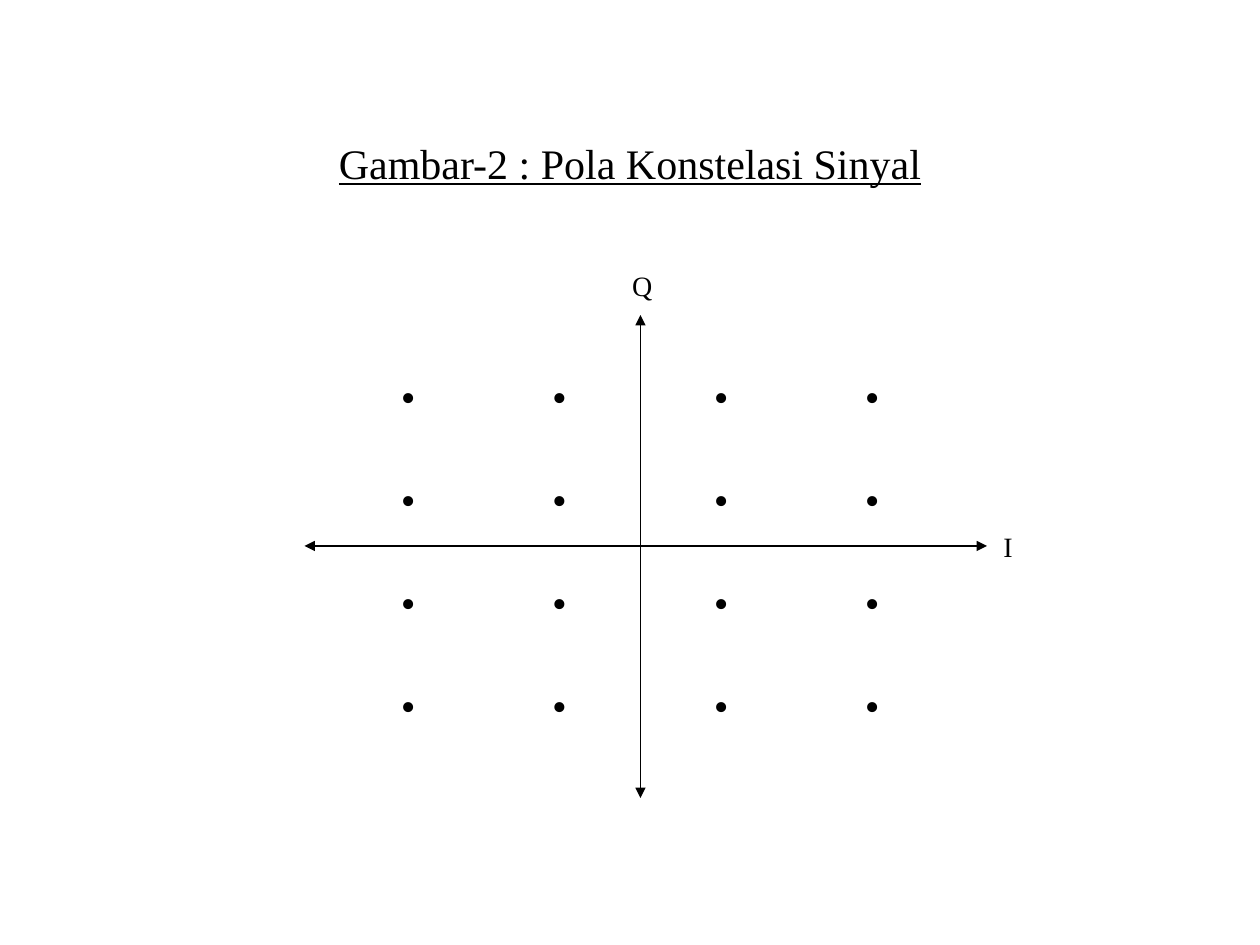
from dataclasses import dataclass

from lxml.etree import SubElement
from pptx import Presentation
from pptx.dml.color import RGBColor
from pptx.enum.shapes import MSO_CONNECTOR
from pptx.enum.text import MSO_ANCHOR as Anchor, PP_ALIGN as Align
from pptx.oxml.ns import qn
from pptx.util import Pt


@dataclass(frozen=True)
class Theme:
    font: str = "Times New Roman"
    ink: RGBColor = RGBColor(0, 0, 0)
    title_size: float = 24
    dot_size: float = 24
    label_size: float = 16
    axis_width: float = 0.75


@dataclass(frozen=True)
class Box:
    left: float
    top: float
    width: float
    height: float

    def lengths(self) -> tuple:
        return Pt(self.left), Pt(self.top), Pt(self.width), Pt(self.height)


@dataclass(frozen=True)
class Axis:
    start: tuple[float, float]
    end: tuple[float, float]
    label: str
    label_box: Box


THEME = Theme()
TITLE_BOX = Box(54, 48, 612, 90)
ORIGIN_X, ORIGIN_Y = 366, 312
AXES = (
    Axis((ORIGIN_X, 180), (ORIGIN_X, 456), "Q", Box(354, 150, 26, 26.5)),
    Axis((174, ORIGIN_Y), (564, ORIGIN_Y), "I", Box(566, 299, 20, 26.5)),
)
DOTS_BOX = Box(222, 210, 288, 208.8)
DOT_ROWS = 4
DOT_TABS = (86.4, 178.8, 265.2)  # columns after the first
DOT_ROW_GAP = 30


def format_text(tf, size: float, align: Align, underline: bool = False) -> None:
    tf.vertical_anchor = Anchor.MIDDLE
    for p in tf.paragraphs:
        p.alignment = align
        for r in p.runs:
            r.font.name = THEME.font
            r.font.size = Pt(size)
            r.font.color.rgb = THEME.ink
            if underline:
                r.font.underline = True


def add_text(slide, box: Box, text: str, size: float, align: Align,
             wrap: bool):
    tf = slide.shapes.add_textbox(*box.lengths()).text_frame
    tf.word_wrap = wrap
    tf.text = text
    format_text(tf, size, align)
    return tf


def add_axis(slide, axis: Axis) -> None:
    points = [Pt(v) for v in (*axis.start, *axis.end)]
    line = slide.shapes.add_connector(MSO_CONNECTOR.STRAIGHT, *points)
    line.line.color.rgb = THEME.ink
    line.line.width = Pt(THEME.axis_width)
    ln = line.line._get_or_add_ln()
    for end in ("a:headEnd", "a:tailEnd"):
        SubElement(ln, qn(end), type="triangle")
    SubElement(line._element.spPr, qn("a:effectLst"))
    add_text(slide, axis.label_box, axis.label, THEME.label_size,
             Align.CENTER, wrap=False)


def add_constellation(slide) -> None:
    row = "\t".join("•" * (len(DOT_TABS) + 1))
    tf = add_text(slide, DOTS_BOX, "\n".join([row] * DOT_ROWS),
                  THEME.dot_size, Align.LEFT, wrap=True)
    for i, p in enumerate(tf.paragraphs):
        p.space_before = Pt(DOT_ROW_GAP if i else 0)
        tabs = SubElement(p._p.get_or_add_pPr(), qn("a:tabLst"))
        for pos in DOT_TABS:
            SubElement(tabs, qn("a:tab"), pos=str(Pt(pos)), algn="l")


def main() -> None:
    prs = Presentation()
    prs.slide_width, prs.slide_height = Pt(720), Pt(540)
    slide = prs.slides.add_slide(prs.slide_layouts[5])

    # Title
    title = slide.shapes.title
    title.left, title.top, title.width, title.height = TITLE_BOX.lengths()
    title.text_frame.text = "Gambar-2 : Pola Konstelasi Sinyal"
    format_text(title.text_frame, THEME.title_size, Align.CENTER,
                underline=True)

    # Axes with their labels
    for axis in AXES:
        add_axis(slide, axis)

    # Signal points
    add_constellation(slide)

    prs.save("out.pptx")


if __name__ == "__main__":
    main()
